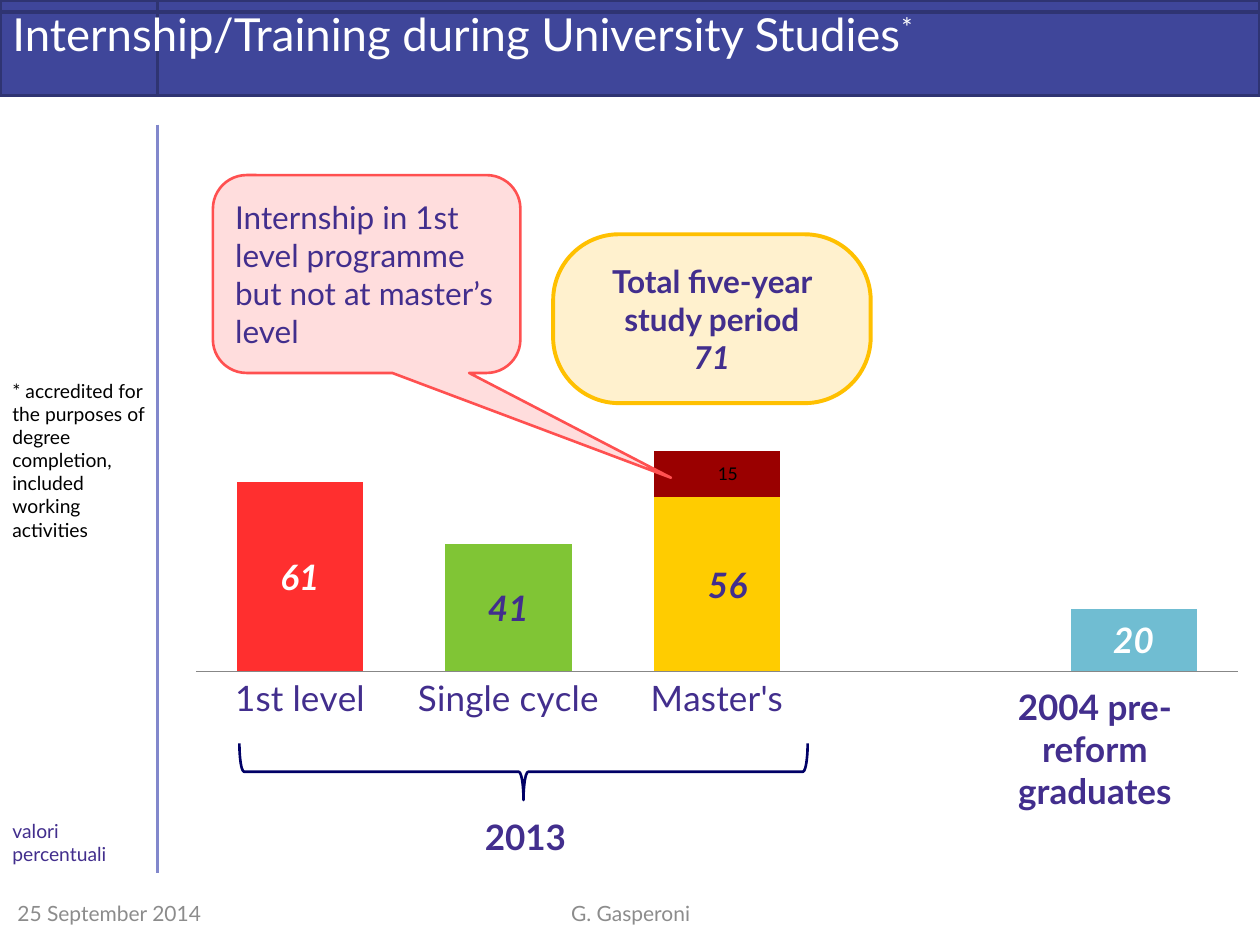
from lxml import etree
from pptx import Presentation
from pptx.chart import data
from pptx.dml import color
from pptx.enum import chart as ch, shapes, text
from pptx.oxml import parse_xml
from pptx.oxml.ns import nsdecls, qn
from pptx.util import Inches, Pt

THEME = {
    "font": "Lato", "ink": "422E8D", "white": "FFFFFF", "black": "000000", "grey": "8C8C8C",
    "band": "3F469A", "band_line": "2F3472", "rule": "8288CC", "brace": "000066", "axis": "878787",
    "total": ("FFF1CE", "FFC000"), "callout": ("FFDDDD", "FF5050"),
    "title": 26, "big": 20, "body": 18, "footer": 12, "note": 11, "small": 10,
}
CATEGORIES = ["1st level", "Single cycle", "Master's", "", ""]
MAIN = [61, 41, 56, None, 20]
EXTRA = [None, None, 15, None, None]
BAR_COLORS = ["FF2F2F", "80C535", "FFCC00", "AA1FE8", "70BDD2"]
LABEL_COLORS = ["white", "ink", "ink", "white", "white"]
EXTRA_COLOR = "9A0000"
SHIFTED_BAR = 2

LEFT, CENTER = text.PP_ALIGN.LEFT, text.PP_ALIGN.CENTER
TOP, MIDDLE = text.MSO_ANCHOR.TOP, text.MSO_ANCHOR.MIDDLE
TEXTS = [
    ("valori percentuali", (0, 6.45, 1.22, 0.5), "note", "ink", False, LEFT, TOP),
    ("2013", (3.68, 6.42, 0.98, 0.44), "big", "ink", True, CENTER, TOP),
    ("2004 pre-reform graduates", (7.62, 5.39, 2.14, 0.81), "big", "ink", True, CENTER, TOP),
    ("* accredited for the purposes of degree completion, included\vworking activities",
     (0, 2.96, 1.3, 1.4), "note", "black", False, LEFT, TOP),
    ("G. Gasperoni", (3.42, 7.05, 3.17, 0.4), "footer", "grey", False, CENTER, MIDDLE),
    ("25 September 2014", (0.04, 7.05, 3.17, 0.4), "footer", "grey", False, LEFT, MIDDLE),
]


def rgb(name):
    return color.RGBColor.from_string(THEME.get(name, name))


def style(font, size, ink, bold=False, italic=False):
    font.name, font.size = THEME["font"], Pt(THEME[size])
    font.bold, font.italic = bold, italic
    font.color.rgb = rgb(ink)


def write(sp, content, size, ink, bold=False, align=LEFT, anchor=TOP):
    tf = sp.text_frame
    tf.word_wrap = True
    tf.vertical_anchor = anchor
    p = tf.paragraphs[0]
    p.text = content
    p.alignment = align
    for r in p.runs:
        style(r.font, size, ink, bold)
    return p


def add_shape(s, kind, box, fill, line, width, adjustments=()):
    sp = s.shapes.add_shape(kind, *map(Inches, box))
    sp.shadow.inherit = False
    if fill:
        sp.fill.solid()
        sp.fill.fore_color.rgb = rgb(fill)
    else:
        sp.fill.background()
    sp.line.color.rgb = rgb(line)
    sp.line.width = Pt(width)
    for i, value in enumerate(adjustments):
        sp.adjustments[i] = value
    return sp


def manual_layout(x, y, w=None, h=None):
    parts = [("x", x), ("y", y)]
    if w:
        parts = [("layoutTarget", "inner"), ("xMode", "edge"), ("yMode", "edge")] + parts
        parts += [("w", w), ("h", h)]
    body = "".join(f'<c:{tag} val="{value}"/>' for tag, value in parts)
    return parse_xml(f'<c:layout {nsdecls("c")}><c:manualLayout>{body}</c:manualLayout></c:layout>')


def add_bars(s):
    cd = data.CategoryChartData(number_format="0")
    cd.categories = CATEGORIES
    cd.add_series("Series 1", MAIN)
    cd.add_series("Series 2", EXTRA)
    box = map(Inches, (1.21, 0.4, 8.62, 5.6))
    chart = s.shapes.add_chart(ch.XL_CHART_TYPE.COLUMN_STACKED, *box, cd).chart
    chart.has_legend = chart.has_title = False
    style(chart.font, "body", "ink")
    value, category = chart.value_axis, chart.category_axis
    value.minimum_scale, value.maximum_scale, value.major_unit = 0, 200, 50
    value.has_major_gridlines = value.visible = False
    category.major_tick_mark = ch.XL_TICK_MARK.NONE
    category.format.line.color.rgb = rgb("axis")
    style(category.tick_labels.font, "big", "ink")

    plot = chart.plots[0]
    plot.gap_width, plot.overlap, plot.vary_by_categories = 65, 100, False
    main, extra = plot.series
    for series, fill in ((main, "816CCF"), (extra, EXTRA_COLOR)):
        series.format.fill.solid()
        series.format.fill.fore_color.rgb = rgb(fill)
    for i, (fill, ink) in enumerate(zip(BAR_COLORS, LABEL_COLORS)):
        point = main.points[i]
        point.format.fill.solid()
        point.format.fill.fore_color.rgb = rgb(fill)
        if MAIN[i] is not None:
            style(point.data_label.font, "big", ink, True, True)
    style(extra.points[SHIFTED_BAR].data_label.font, "small", "black")

    space = chart._chartSpace
    for label in space.xpath(f".//c:dLbl[c:idx/@val='{SHIFTED_BAR}']"):
        label.insert(1, manual_layout(0.01, 0))
    area = space.xpath(".//c:plotArea")[0]
    for old in area.findall(qn("c:layout")):
        area.remove(old)
    area.insert(0, manual_layout(0.04, 0, 0.96, 0.88))


def main():
    prs = Presentation()
    prs.slide_width, prs.slide_height = Inches(10), Inches(7.5)
    s = prs.slides.add_slide(prs.slide_layouts[6])
    kinds = shapes.MSO_SHAPE

    rule = s.shapes.add_connector(shapes.MSO_CONNECTOR.STRAIGHT,
                                  *map(Inches, (1.25, 0.99, 1.25, 6.93)))
    rule.line.color.rgb = rgb("rule")
    rule.line.width = Pt(1.5)
    etree.SubElement(rule._element.spPr, qn("a:effectLst"))

    band = (0, 0, 10, 0.76)
    add_shape(s, kinds.FLOWCHART_INTERNAL_STORAGE, band, "band", "band_line", 2)
    add_bars(s)

    total = add_shape(s, kinds.ROUNDED_RECTANGLE, (4.39, 1.86, 2.52, 1.34),
                      *THEME["total"], 2.25, [0.39])
    p = write(total, "Total five-year study period\v71", "body", "ink", True, CENTER, MIDDLE)
    p.runs[-1].font.italic = True

    brace = add_shape(s, kinds.LEFT_BRACE, (3.93, 3.87, 0.45, 4.51), None, "brace", 1.5)
    brace.rotation = 270

    callout = add_shape(s, kinds.ROUNDED_RECTANGULAR_CALLOUT, (1.69, 1.39, 2.44, 1.57),
                        *THEME["callout"], 1.5, [0.99, 1.03, 0.17])
    write(callout, "Internship in 1st level programme but not at master’s level",
          "body", "ink", anchor=MIDDLE)

    title = s.shapes.add_textbox(*map(Inches, band))
    p = write(title, "Internship/Training during University Studies", "title", "white")
    r = p.add_run()
    r.text = "*"
    style(r.font, "title", "white")
    r.font._element.set("baseline", "30000")

    for content, box, *look in TEXTS:
        write(s.shapes.add_textbox(*map(Inches, box)), content, *look)
    prs.save("out.pptx")


if __name__ == "__main__":
    main()
